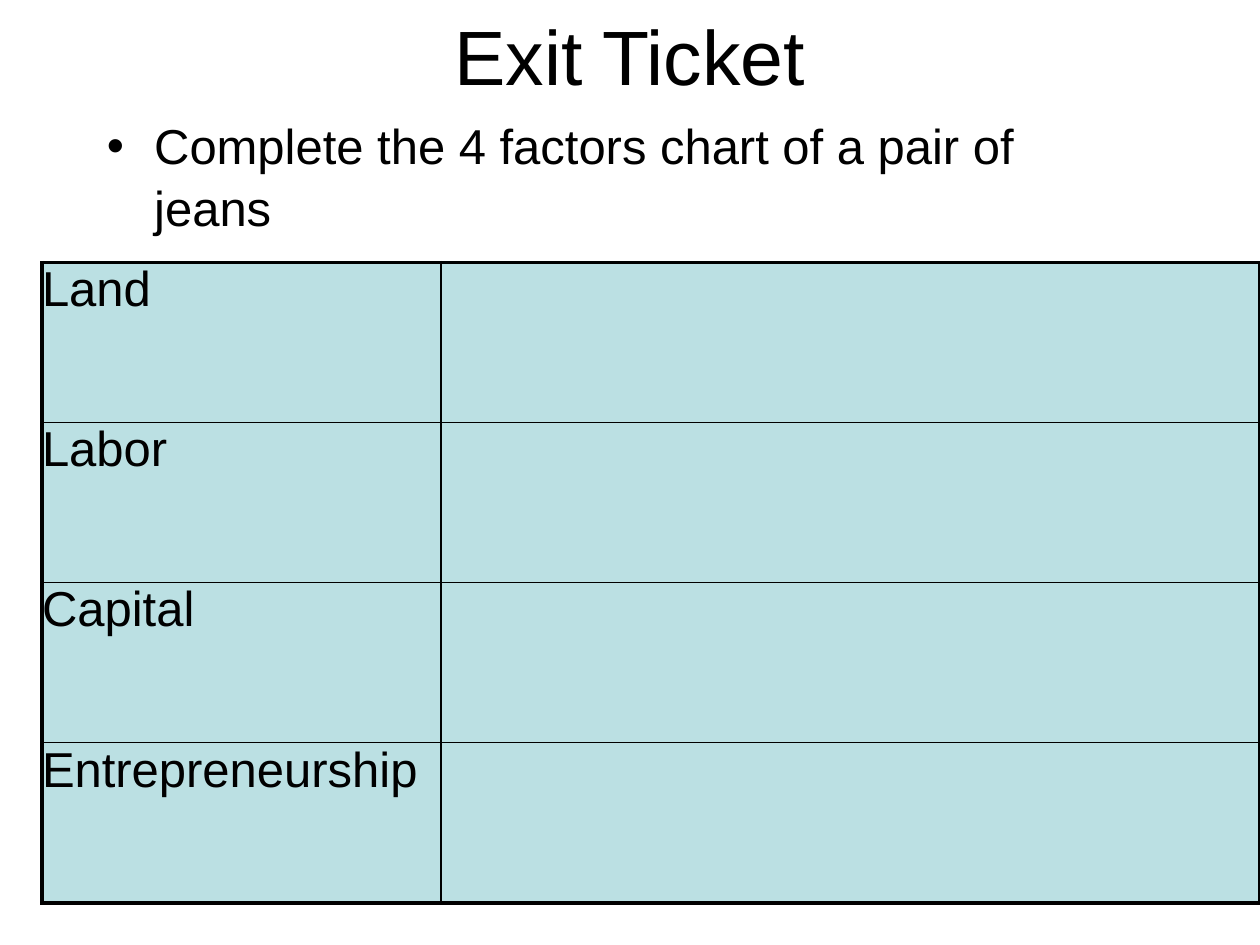
import dataclasses

import lxml.etree
import pptx
import pptx.dml.color
import pptx.enum.text
import pptx.oxml.ns
import pptx.util

Pt = pptx.util.Pt
BLACK = pptx.dml.color.RGBColor(0x00, 0x00, 0x00)
PALE_TEAL = pptx.dml.color.RGBColor(0xBB, 0xE0, 0xE3)
FONT = "Arial"
OUTER_LINE, INNER_LINE = Pt(2.25), Pt(1)


@dataclasses.dataclass
class Box:
    left: float
    top: float
    width: float
    height: float

    def lengths(self) -> list:
        return [Pt(value) for value in dataclasses.astuple(self)]


TITLE_BOX = Box(36, 24, 648, 14.4)
PROMPT_BOX = Box(54, 61, 600, 455)
TABLE_BOX = Box(24, 150, 696, 366)
COLUMN_WIDTHS = (228, 468)
FACTORS = ("Land", "Labor", "Capital", "Entrepreneurship")


def write_text(text_frame, text: str, *, size: float = 28, align=None,
               line_spacing: float = 1.0):
    paragraph = text_frame.paragraphs[0]
    paragraph.alignment = align
    paragraph.line_spacing = line_spacing
    run = paragraph.add_run()
    run.text = text
    run.font.name = FONT
    run.font.size = Pt(size)
    run.font.color.rgb = BLACK
    return paragraph


def add_text_box(slide, box: Box, text: str, *, anchor, **text_format):
    text_frame = slide.shapes.add_textbox(*box.lengths()).text_frame
    text_frame.word_wrap = True
    text_frame.vertical_anchor = anchor
    return write_text(text_frame, text, **text_format)


def add_element(parent, tag: str, **attributes: str):
    return lxml.etree.SubElement(parent, pptx.oxml.ns.qn(tag), **attributes)


def add_bullet(paragraph, indent: float) -> None:
    properties = paragraph._p.get_or_add_pPr()
    properties.set("marL", str(Pt(indent)))
    properties.set("indent", str(-Pt(indent)))
    color = add_element(properties, "a:buClr")
    add_element(color, "a:srgbClr", val=str(BLACK))
    add_element(properties, "a:buFont", typeface=FONT)
    add_element(properties, "a:buChar", char="•")


def style_cell(cell, outer_sides: dict[str, bool]) -> None:
    cell.margin_left = cell.margin_right = Pt(0)
    cell.margin_top = cell.margin_bottom = Pt(0)
    properties = cell._tc.get_or_add_tcPr()
    # Borders must come before the fill
    for tag, is_outer in outer_sides.items():
        width = OUTER_LINE if is_outer else INNER_LINE
        line = add_element(properties, tag, w=str(width))
        line_fill = add_element(line, "a:solidFill")
        add_element(line_fill, "a:srgbClr", val=str(BLACK))
    cell.fill.solid()
    cell.fill.fore_color.rgb = PALE_TEAL


def add_factor_table(slide) -> None:
    row_count, column_count = len(FACTORS), len(COLUMN_WIDTHS)
    table = slide.shapes.add_table(
        row_count, column_count, *TABLE_BOX.lengths()).table
    table.first_row = table.horz_banding = False
    for column, width in zip(table.columns, COLUMN_WIDTHS):
        column.width = Pt(width)
    for row_index, factor in enumerate(FACTORS):
        table.rows[row_index].height = Pt(TABLE_BOX.height / row_count)
        for column_index in range(column_count):
            style_cell(table.cell(row_index, column_index), {
                "a:lnL": column_index == 0,
                "a:lnR": column_index == column_count - 1,
                "a:lnT": row_index == 0,
                "a:lnB": row_index == row_count - 1,
            })
        write_text(table.cell(row_index, 0).text_frame, factor)


def main() -> None:
    presentation = pptx.Presentation()
    presentation.slide_width, presentation.slide_height = Pt(720), Pt(540)
    slide = presentation.slides.add_slide(presentation.slide_layouts[6])

    # Title and prompt
    add_text_box(slide, TITLE_BOX, "Exit Ticket", size=44,
                 align=pptx.enum.text.PP_ALIGN.CENTER,
                 anchor=pptx.enum.text.MSO_ANCHOR.MIDDLE)
    prompt = add_text_box(slide, PROMPT_BOX,
                          "Complete the 4 factors chart of a pair of jeans",
                          line_spacing=1.05,
                          anchor=pptx.enum.text.MSO_ANCHOR.TOP)
    add_bullet(prompt, 27)

    # Four factors chart
    add_factor_table(slide)

    presentation.save("out.pptx")


if __name__ == "__main__":
    main()
